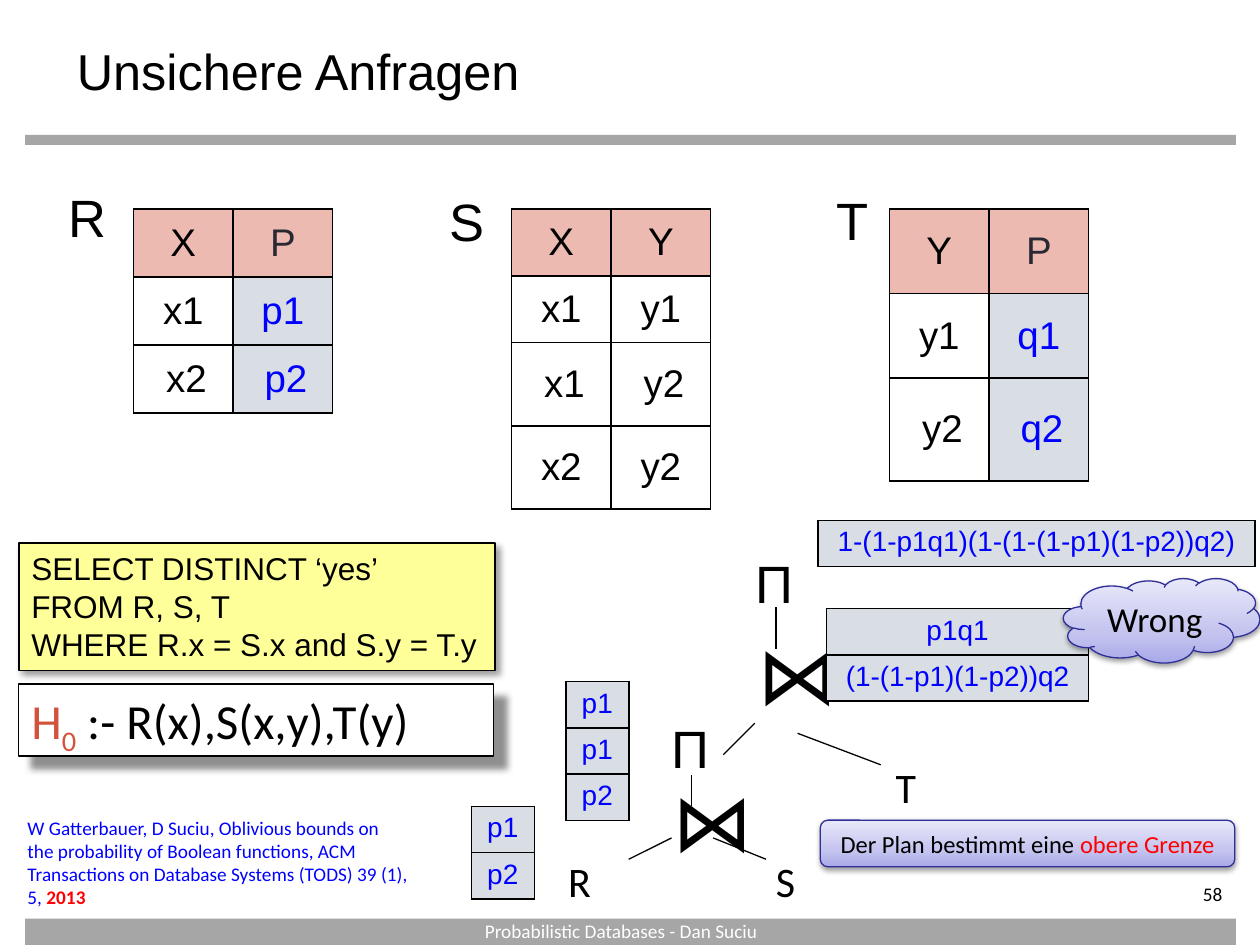
from dataclasses import dataclass
from lxml.etree import SubElement
from pptx import Presentation
from pptx.dml.color import RGBColor
from pptx.enum.shapes import MSO_CONNECTOR as Connector, MSO_SHAPE as Shape
from pptx.enum.text import MSO_ANCHOR as Anchor, MSO_AUTO_SIZE as AutoSize, PP_ALIGN as Align
from pptx.oxml import parse_xml
from pptx.oxml.ns import nsdecls, qn
from pptx.util import Inches, Pt


@dataclass(frozen=True)
class Theme:
    sans: str = "Arial"
    body: str = "Calibri"
    black: str = "000000"
    white: str = "FFFFFF"
    bar: str = "A6A6A6"
    header: str = "EDBAB1"
    header_text: str = "292934"
    shade: str = "D9DEE4"
    blue: str = "0000FF"
    red: str = "FF0000"
    rust: str = "D2533C"
    yellow: str = "FFFF99"
    outline: str = "2F2F98"
    gradient: tuple = ((0, "A9A9E9"), (35, "C4C4EF"), (100, "E8E8FA"))
    title: float = 28.8
    name: int = 30
    cell: int = 22
    join: int = 46
    leaf: int = 24
    formula: int = 28
    wrong: int = 20
    query: int = 18
    prob: int = 16
    callout: int = 14
    small: int = 11


THEME = Theme()


def rgb(color):
    return RGBColor.from_string(color)


def style(font, size=None, color=None, face=None):
    if size:
        font.size = Pt(size)
    if face:
        font.name = face
    if color:
        font.color.rgb = rgb(color)


def write(box, lines, size, color=THEME.black, face=THEME.body, align=Align.LEFT,
          anchor=Anchor.TOP, wrap=False, grow=True, insets=(0.1, 0.05, 0.1, 0.05)):
    """Each line is a string, or a list of (text, colour) spans."""
    frame = box.text_frame
    frame.word_wrap = wrap
    frame.auto_size = AutoSize.SHAPE_TO_FIT_TEXT if grow else AutoSize.NONE
    frame.vertical_anchor = anchor
    (frame.margin_left, frame.margin_top,
     frame.margin_right, frame.margin_bottom) = map(Inches, insets)
    for index, line in enumerate(lines):
        para = frame.add_paragraph() if index else frame.paragraphs[0]
        para.alignment = align
        if isinstance(line, str):
            para.text = line
            style(para.font, size, color, face)
            continue
        style(para.font, size, face=face)
        for text, span_color in line:
            span = para.add_run()
            span.text = text
            style(span.font, color=span_color)


def text_box(page, left, top, width, height, lines, size, **options):
    box = page.shapes.add_textbox(*map(Inches, (left, top, width, height)))
    write(box, lines, size, **options)
    return box


def panel(page, kind, left, top, width, height, fill=None, line=None):
    shape = page.shapes.add_shape(kind, *map(Inches, (left, top, width, height)))
    shape.shadow.inherit = False
    if fill:
        shape.fill.solid()
        shape.fill.fore_color.rgb = rgb(fill)
    if line:
        shape.line.color.rgb = rgb(line)
        shape.line.width = Pt(0.75)
    else:
        shape.line.fill.background()
    return shape


def cast_shadow(shape, alpha, blur, distance, angle):
    effects = shape._element.spPr.find(qn("a:effectLst"))
    shadow = SubElement(effects, qn("a:outerShdw"), blurRad=str(Pt(blur)), dist=str(Pt(distance)),
                        dir=str(angle * 60000), algn="ctr", rotWithShape="0")
    color = SubElement(shadow, qn("a:srgbClr"), val=THEME.black)
    SubElement(color, qn("a:alpha"), val=str(alpha * 1000))


def callout(page, kind, left, top, width, height, line, size):
    shape = panel(page, kind, left, top, width, height, line=THEME.outline)
    shape.fill.background()
    stops = "".join(f'<a:gs pos="{pos * 1000}"><a:srgbClr val="{color}"/></a:gs>'
                    for pos, color in THEME.gradient)
    gradient = parse_xml(f'<a:gradFill {nsdecls("a")} rotWithShape="1"><a:gsLst>{stops}</a:gsLst>'
                         '<a:lin ang="16200000" scaled="0"/></a:gradFill>')
    properties = shape._element.spPr
    properties.replace(properties.find(qn("a:noFill")), gradient)
    cast_shadow(shape, 38, 3.1, 1.6, 90)
    write(shape, [line], size, align=Align.CENTER, anchor=Anchor.MIDDLE)


def grid(page, left, top, widths, heights, cells, size, insets, anchor=Anchor.TOP):
    """Each cell is (text, colour, fill or None, left indent)."""
    frame = page.shapes.add_table(len(heights), len(widths), *map(
        Inches, (left, top, sum(widths), sum(heights))))
    table = frame.table
    for column, width in zip(table.columns, widths):
        column.width = Inches(width)
    for row, height, values in zip(table.rows, heights, cells):
        row.height = Inches(height)
        for cell, (text, color, fill, indent) in zip(row.cells, values):
            properties = cell._tc.get_or_add_tcPr()
            for side in ("lnL", "lnR", "lnT", "lnB"):
                border = SubElement(properties, qn(f"a:{side}"), w=str(Pt(1)))
                SubElement(SubElement(border, qn("a:solidFill")), qn("a:srgbClr"), val=THEME.black)
            if fill:
                cell.fill.solid()
                cell.fill.fore_color.rgb = rgb(fill)
            else:
                cell.fill.background()
            (cell.margin_left, cell.margin_top,
             cell.margin_right, cell.margin_bottom) = map(Inches, insets)
            cell.vertical_anchor = anchor
            para = cell.text_frame.paragraphs[0]
            para.text = text
            para.alignment = Align.CENTER
            para._p.get_or_add_pPr().set("marL", str(Inches(indent)))
            style(para.font, size, color, THEME.sans)


def relation(page, left, top, name, name_offset, rows, heights, indented, inset=0):
    """A named relation; a column P holds probabilities."""
    dx, dy, width = name_offset
    text_box(page, left + dx, top + dy, width, 0.58, [name], THEME.name,
             face=THEME.sans, insets=(0.07, 0.04, 0.07, 0.04))
    header, *body = rows
    cells = [[(text, THEME.header_text if text == "P" else THEME.black, THEME.header, 0)
              for text in header]]
    for index, values in enumerate(body, 1):
        indent = 0.05 if index == indented else 0
        cells.append([(text, THEME.blue, THEME.shade, indent) if title == "P"
                      else (text, THEME.black, None, indent)
                      for title, text in zip(header, values)])
    grid(page, left, top, (0.79, 0.79), heights, cells, THEME.cell, (inset,) * 4, Anchor.MIDDLE)


def probabilities(page, left, top, width, values):
    cells = [[(value, THEME.blue, THEME.shade, 0)] for value in values]
    grid(page, left, top, (width,), (0.365,) * len(values), cells,
         THEME.prob, (0.1, 0.05, 0.1, 0.05))


def plan(page, left, top):
    """Query plan tree with the intermediate probabilities."""
    nodes = [("⋈", 1.5, 0.58, 0.87, THEME.join, THEME.body),
             ("Π", 1.49, 0, 0.61, THEME.name, THEME.sans),
             ("⋈", 0.83, 1.75, 0.87, THEME.join, THEME.body),
             ("Π", 0.82, 1.31, 0.61, THEME.name, THEME.sans),
             ("R", 0, 2.42, 0.5, THEME.leaf, THEME.body),
             ("S", 1.65, 2.42, 0.5, THEME.leaf, THEME.body),
             ("T", 2.6, 1.67, 0.5, THEME.leaf, THEME.body)]
    for text, dx, dy, height, size, face in nodes:
        width = 0.42 if size == THEME.leaf else 0.52
        text_box(page, left + dx, top + dy, width, height, [text], size,
                 face=face, anchor=Anchor.MIDDLE)
    edges = [(0.58, 2.5, 0.92, 2.33), (1.67, 2.5, 1.25, 2.33), (2.58, 1.75, 1.92, 1.5),
             (1.08, 2.08, 1.08, 1.83), (1.33, 1.67, 1.58, 1.42), (1.75, 0.83, 1.75, 0.5)]
    for x1, y1, x2, y2 in edges:
        edge = page.shapes.add_connector(Connector.STRAIGHT, *map(
            Inches, (left + x1, top + y1, left + x2, top + y2)))
        edge.line.color.rgb = rgb(THEME.black)
        edge.line.width = Pt(0.75)
        SubElement(edge._element.spPr, qn("a:effectLst"))
    probabilities(page, left - 0.67, top + 2.08, 0.5, ["p1", "p2"])
    probabilities(page, left + 2.15, top + 0.51, 2.08, ["p1q1", "(1-(1-p1)(1-p2))q2"])
    probabilities(page, left + 0.08, top + 1.09, 0.5, ["p1", "p1", "p2"])


def verdict(page, left, top):
    """Final probability and what it means."""
    callout(page, Shape.CLOUD, left + 1.95, top + 0.46, 1.56, 0.67, "Wrong", THEME.wrong)
    callout(page, Shape.ROUNDED_RECTANGLE, left + 0.02, top + 2.38, 3.29, 0.37,
            [("Der Plan bestimmt eine ", THEME.black), ("obere Grenze", THEME.red)], THEME.callout)
    probabilities(page, left, top, 3.47, ["1-(1-p1q1)(1-(1-(1-p1)(1-p2))q2)"])


def query(page, left, top):
    """The query as a rule and in SQL."""
    rule = panel(page, Shape.RECTANGLE, left, top + 1.12, 3.77, 0.57, THEME.white, THEME.black)
    cast_shadow(rule, 43, 4, 10, 45)
    write(rule, [[("H", THEME.rust), ("0", THEME.rust), (" :- R(x),S(x,y),T(y)", THEME.black)]],
          THEME.formula)
    subscript = rule.text_frame.paragraphs[0].runs[1]
    subscript._r.get_or_add_rPr().set("baseline", "-25000")
    sql = panel(page, Shape.RECTANGLE, left, top, 3.78, 1.01, THEME.yellow, THEME.black)
    cast_shadow(sql, 40, 4, 3, 45)
    write(sql, ["SELECT DISTINCT ‘yes’", "FROM R, S, T\vWHERE R.x = S.x and S.y = T.y"],
          THEME.query, face=THEME.sans)


def heading(page, left, top):
    title = page.shapes.title
    title.left, title.top, title.width, title.height = map(Inches, (left, top, 9, 0.55))
    write(title, ["Unsichere Anfragen"], THEME.title, face=THEME.sans,
          anchor=Anchor.MIDDLE, wrap=True, grow=False)


def footer(page, left, top):
    """Citation, page number and footer line."""
    text_box(page, left + 8.5, top - 0.29, 1.1, 0.22, ["58"], THEME.small,
             align=Align.RIGHT, wrap=True, grow=False, insets=(0, 0, 0.1, 0))
    citation = panel(page, Shape.RECTANGLE, left - 0.08, top - 0.86, 3.23, 0.84, THEME.white)
    write(citation, [[("W Gatterbauer, D Suciu, Oblivious bounds on the probability of Boolean "
                       "functions, ACM Transactions on Database Systems (TODS) 39 (1), 5, ",
                       THEME.blue), ("2013", THEME.red)]], THEME.small, wrap=True)
    citation.text_frame.paragraphs[0].runs[1].font.bold = True
    text_box(page, left + 3.29, top - 0.04, 2.88, 0.24, ["Probabilistic Databases - Dan Suciu"],
             THEME.small, color=THEME.white, align=Align.CENTER, wrap=True, grow=False)


def main():
    deck = Presentation()
    deck.slide_width, deck.slide_height = Inches(10), Inches(7.5)
    page = deck.slides.add_slide(deck.slide_layouts[5])
    for top, height in ((1.07, 0.08), (7.29, 0.21)):
        panel(page, Shape.RECTANGLE, 0.2, top, 9.61, height, THEME.bar)
    heading(page, 0.51, 0.28)
    relation(page, 4.06, 1.66, "S", (-0.56, -0.2, 0.42),
             ["XY", ("x1", "y1"), ("x1", "y2"), ("x2", "y2")], (0.53, 0.53, 0.66, 0.66), 2)
    relation(page, 1.06, 1.66, "R", (-0.59, -0.23, 0.45),
             ["XP", ("x1", "p1"), ("x2", "p2")], (0.54,) * 3, 2)
    relation(page, 7.06, 1.66, "T", (-0.49, -0.21, 0.4),
             ["YP", ("y1", "q1"), ("y2", "q2")], (0.67, 0.67, 0.82), 2, 0.01)
    plan(page, 4.41, 4.32)
    verdict(page, 6.49, 4.13)
    query(page, 0.15, 4.31)
    footer(page, 0.2, 7.29)
    deck.save("out.pptx")


if __name__ == "__main__":
    main()
